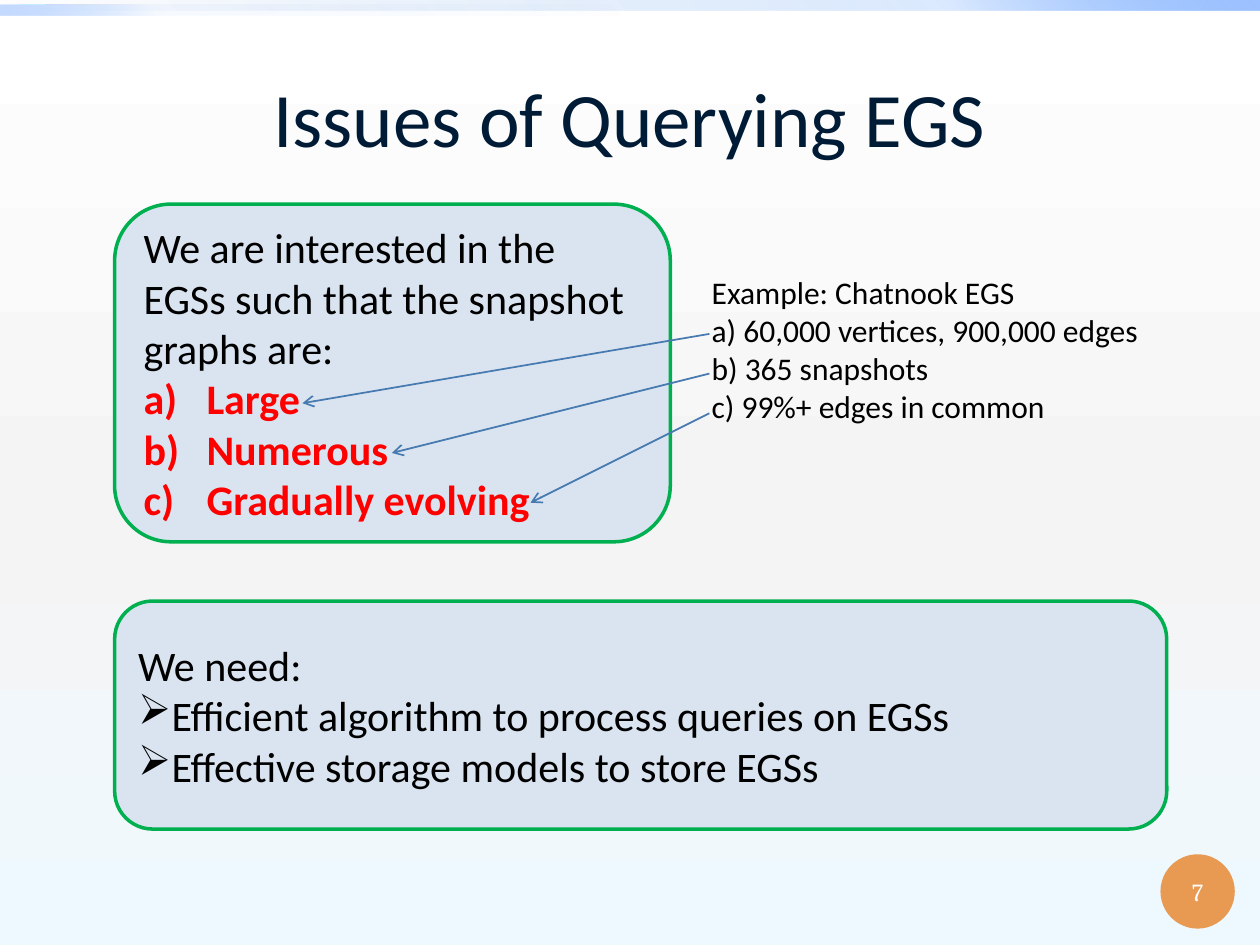
from lxml.etree import SubElement
from pptx import Presentation
from pptx.dml.color import RGBColor
from pptx.enum.shapes import MSO_CONNECTOR, MSO_SHAPE
from pptx.enum.text import MSO_ANCHOR, PP_ALIGN
from pptx.oxml.ns import qn
from pptx.util import Inches, Pt

WHITE = RGBColor(0xFF, 0xFF, 0xFF)
BLACK = RGBColor(0, 0, 0)
RED = RGBColor(0xFF, 0, 0)
NAVY = RGBColor(0x00, 0x1B, 0x36)
GREEN = RGBColor(0x00, 0xB0, 0x50)
PALE_BLUE = RGBColor(0xDA, 0xE4, 0xF0)
ARROW_BLUE = RGBColor(0x47, 0x7A, 0xB1)
ORANGE = RGBColor(0xE8, 0x9A, 0x53)
GREY = RGBColor(0xF4, 0xF4, 0xF4)
ICE = RGBColor(0xEE, 0xF9, 0xFF)
DEEP_BLUE = RGBColor(0x00, 0x58, 0xB7)
MID_BLUE = RGBColor(0x4F, 0x95, 0xFF)
LIGHT_BLUE = RGBColor(0x9E, 0xC2, 0xFF)


def paint_gradient(fill, owner, stops, angle):
    """Fill with (position, colour, opacity) stops, in percent, at a clockwise angle."""
    fill.gradient()
    gradient = next(owner.iter(qn("a:gradFill")))
    for child in list(gradient):
        gradient.remove(child)
    stop_list = SubElement(gradient, qn("a:gsLst"))
    for position, color, opacity in stops:
        stop = SubElement(stop_list, qn("a:gs"), pos=str(position * 1000))
        tint = SubElement(stop, qn("a:srgbClr"), val=str(color))
        if opacity < 100:
            SubElement(tint, qn("a:alpha"), val=str(opacity * 1000))
    SubElement(gradient, qn("a:lin"), ang=str(angle * 60000), scaled="0")


def add_shape(slide, kind, box, fill=None, line=None):
    """Add a flat shape in a box given in inches."""
    shape = slide.shapes.add_shape(kind, *map(Inches, box))
    shape.shadow.inherit = False
    if fill is not None:
        shape.fill.solid()
        shape.fill.fore_color.rgb = fill
    if line is None:
        shape.line.fill.background()
    else:
        shape.line.color.rgb = line
        shape.line.width = Pt(2)
    return shape


def write(frame, text, size=24, font="Calibri", color=BLACK, bold=False,
          align=PP_ALIGN.LEFT, bullet=None, indent=0):
    """Write one paragraph, filling the empty first one before adding more."""
    paragraph = frame.paragraphs[0]
    if paragraph.runs:
        paragraph = frame.add_paragraph()
    paragraph.alignment = align
    if bullet:
        properties = paragraph._p.get_or_add_pPr()
        properties.set("marL", str(Inches(indent)))
        properties.set("indent", str(-Inches(indent)))
        tag, attributes = bullet
        SubElement(properties, qn(tag), attributes)
    run = paragraph.add_run()
    run.text = text
    run.font.size = Pt(size)
    run.font.name = font
    run.font.bold = bold
    run.font.color.rgb = color


def add_text_box(slide, box, anchor=MSO_ANCHOR.TOP):
    """Add a wrapping text box and return its frame."""
    frame = slide.shapes.add_textbox(*map(Inches, box)).text_frame
    frame.word_wrap = True
    frame.vertical_anchor = anchor
    return frame


def add_backdrop(slide):
    """Paint the background and the two bands along the top edge."""
    paint_gradient(slide.background.fill, slide.element,
                   [(0, WHITE, 100), (55, GREY, 100), (100, ICE, 100)], 90)
    bands = [((0, 0, 10, 0.08), 20, 100, 315), ((0, 0.04, 5, 0.08), 5, 60, 135)]
    for box, middle, end, angle in bands:
        band = add_shape(slide, MSO_SHAPE.RECTANGLE, box)
        paint_gradient(band.fill, band.element,
                       [(0, DEEP_BLUE, 0), (75, MID_BLUE, middle), (100, LIGHT_BLUE, end)], angle)


def add_page_number(slide, box, number):
    """Add the round page number."""
    badge = add_shape(slide, MSO_SHAPE.OVAL, box, ORANGE)
    frame = badge.text_frame
    frame.vertical_anchor = MSO_ANCHOR.MIDDLE
    write(frame, number, size=14, font="Cambria", color=WHITE, align=PP_ALIGN.CENTER)


def add_panel(slide, box, lead, items, bullet, **item_format):
    """Add a rounded panel with a lead sentence and a list."""
    panel = add_shape(slide, MSO_SHAPE.ROUNDED_RECTANGLE, box, PALE_BLUE, GREEN)
    frame = panel.text_frame
    frame.word_wrap = True
    frame.vertical_anchor = MSO_ANCHOR.MIDDLE
    write(frame, lead)
    for item in items:
        write(frame, item, bullet=bullet, **item_format)


def add_example(slide, box, lines):
    """Add the worked example beside the first panel."""
    frame = add_text_box(slide, box)
    for line in lines:
        write(frame, line, size=18)


def add_arrow(slide, start, end):
    """Draw a thin arrow between two points in inches."""
    arrow = slide.shapes.add_connector(MSO_CONNECTOR.STRAIGHT, *map(Inches, start + end))
    arrow.line.color.rgb = ARROW_BLUE
    arrow.line.width = Pt(1)
    SubElement(arrow.line._get_or_add_ln(), qn("a:tailEnd"), type="arrow")
    SubElement(arrow.element.spPr, qn("a:effectLst"))


def main():
    """Build and save the slide."""
    deck = Presentation()
    deck.slide_width, deck.slide_height = Inches(10), Inches(7.5)
    slide = deck.slides.add_slide(deck.slide_layouts[6])
    add_backdrop(slide)
    add_page_number(slide, (9.21, 6.78, 0.59, 0.59), "7")
    title = add_text_box(slide, (0.5, 0.3, 9, 1.25), MSO_ANCHOR.MIDDLE)
    write(title, "Issues of Querying EGS", size=44, color=NAVY, align=PP_ALIGN.CENTER)
    add_panel(slide, (0.91, 1.62, 4.41, 2.68),
              "We are interested in the EGSs such that the snapshot graphs are:",
              ["Large", "Numerous", "Gradually evolving"],
              ("a:buAutoNum", {"type": "alphaLcParenR"}), indent=0.5, color=RED, bold=True)
    add_panel(slide, (0.91, 4.77, 8.35, 1.81), "We need:",
              ["Efficient algorithm to process queries on EGSs",
               "Effective storage models to store EGSs"],
              ("a:buChar", {"char": "➢"}))
    add_example(slide, (5.55, 2.12, 3.7, 1.31),
                ["Example: Chatnook EGS", "a) 60,000 vertices, 900,000 edges",
                 "b) 365 snapshots", "c) 99%+ edges in common"])
    for row, item_end in enumerate([2.4, 3.11, 4.21]):
        add_arrow(slide, (5.63, 2.65 + 0.315 * row), (item_end, 3.2 + 0.395 * row))
    deck.save("out.pptx")


if __name__ == "__main__":
    main()
